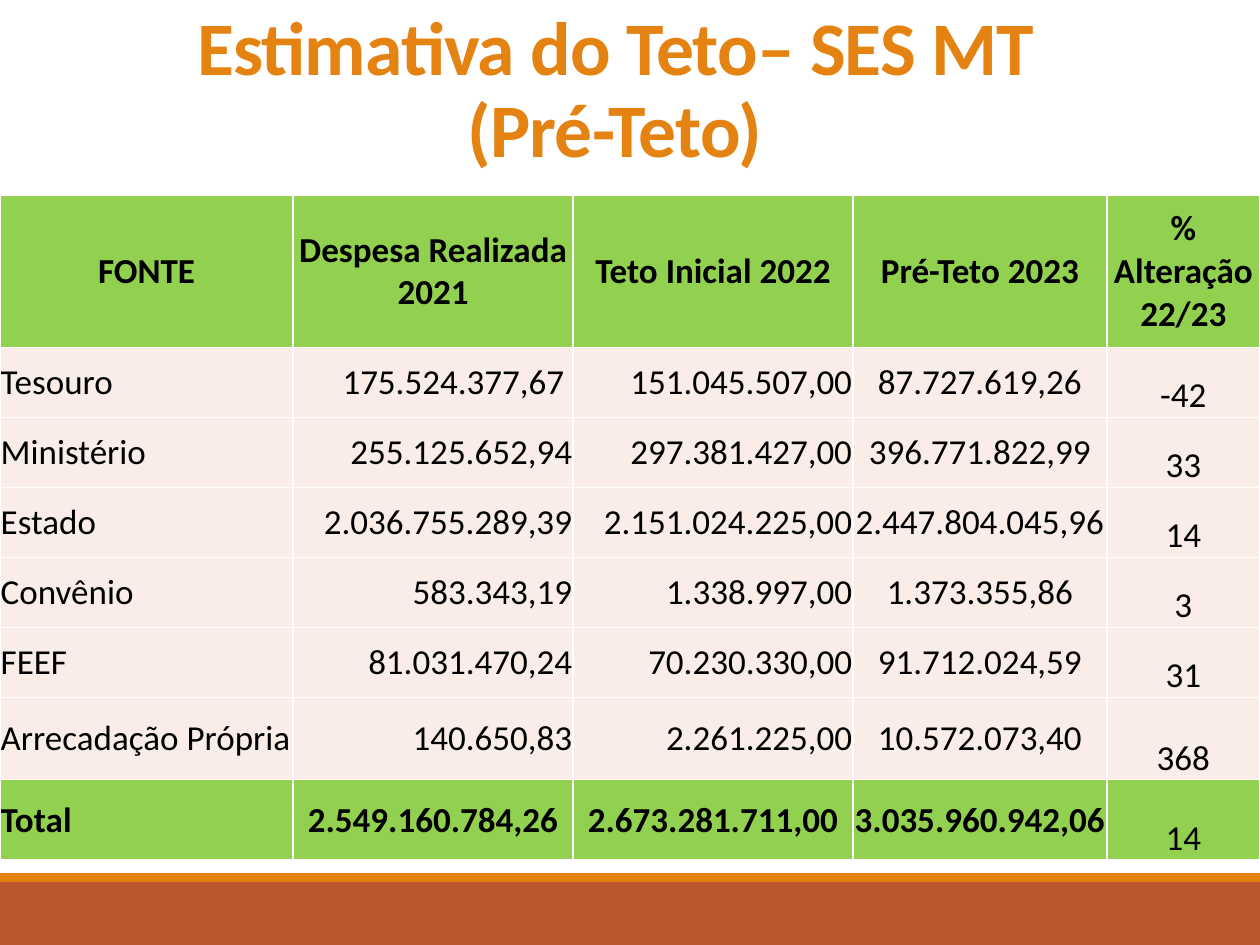
from dataclasses import dataclass

from lxml import etree
from pptx import Presentation
from pptx.dml.color import RGBColor
from pptx.enum import shapes, text
from pptx.oxml import ns
from pptx.util import Pt


@dataclass(frozen=True)
class Theme:
    font: str = "Calibri"
    title_size: float = 43.2
    table_size: float = 20
    orange: str = "E48312"
    rust: str = "BD582C"
    green: str = "92D050"
    blush: str = "FAEDE7"
    ink: str = "000000"
    border: str = "FFFFFF"


THEME = Theme()
LEFT, CENTER, RIGHT = (text.PP_ALIGN.LEFT, text.PP_ALIGN.CENTER,
                       text.PP_ALIGN.RIGHT)
MIDDLE, BOTTOM = text.MSO_ANCHOR.MIDDLE, text.MSO_ANCHOR.BOTTOM

COLUMN_WIDTHS = [167.5, 160, 160, 145, 87.5]
ROW_HEIGHTS = [87] + [40] * 5 + [47, 46]
BODY_ALIGNMENT = [LEFT, RIGHT, RIGHT, CENTER, CENTER]
TOTAL_ALIGNMENT = [LEFT] + [CENTER] * 4
BUDGET = [
    ["FONTE", "Despesa Realizada 2021", "Teto Inicial 2022", "Pré-Teto 2023",
     "% Alteração 22/23"],
    ["Tesouro", "175.524.377,67 ", "151.045.507,00", "87.727.619,26", "-42"],
    ["Ministério", "255.125.652,94", "297.381.427,00", "396.771.822,99", "33"],
    ["Estado", "2.036.755.289,39", "2.151.024.225,00", "2.447.804.045,96", "14"],
    ["Convênio", "583.343,19", "1.338.997,00", "1.373.355,86", "3"],
    ["FEEF", "81.031.470,24", "70.230.330,00", "91.712.024,59", "31"],
    ["Arrecadação Própria", "140.650,83", "2.261.225,00", "10.572.073,40", "368"],
    ["Total", "2.549.160.784,26", "2.673.281.711,00", "3.035.960.942,06", "14"],
]


def set_all(target, values):
    for name, value in values.items():
        setattr(target, name, value)


def place(shape, box):
    set_all(shape, dict(zip(("left", "top", "width", "height"), map(Pt, box))))


def write(frame, words, size, color, bold, align):
    paragraph = frame.paragraphs[0]
    paragraph.alignment = align
    run = paragraph.add_run()
    run.text = words
    set_all(run.font, {"name": THEME.font, "size": Pt(size), "bold": bold})
    run.font.color.rgb = RGBColor.from_string(color)
    return paragraph, run


def add_title(slide, box):
    title = slide.shapes.title
    place(title, box)
    set_all(title.text_frame, {"word_wrap": True, "vertical_anchor": BOTTOM,
                               "auto_size": text.MSO_AUTO_SIZE.NONE})
    paragraph, run = write(title.text_frame, "Estimativa do Teto– SES MT (Pré-Teto)",
                           THEME.title_size, THEME.orange, True, CENTER)
    set_all(paragraph, {"line_spacing": 0.9, "space_before": Pt(0)})
    run.font._element.set("spc", "-50")


def add_footer(slide, box):
    """Stack a thin orange band on a rust band."""
    left, top, width, height = box
    edge = 5
    bands = [(top, edge, THEME.orange), (top + edge, height - edge, THEME.rust)]
    for band_top, band_height, color in bands:
        band = slide.shapes.add_shape(
            shapes.MSO_SHAPE.RECTANGLE,
            *map(Pt, (left, band_top, width, band_height)))
        band.shadow.inherit = False
        band.fill.solid()
        band.fill.fore_color.rgb = RGBColor.from_string(color)
        band.line.fill.background()


def add_borders(cell):
    properties = cell._tc.get_or_add_tcPr()
    for position, side in enumerate(("lnL", "lnR", "lnT", "lnB")):
        line = etree.Element(ns.qn(f"a:{side}"), w=str(Pt(1)))
        fill = etree.SubElement(line, ns.qn("a:solidFill"))
        etree.SubElement(fill, ns.qn("a:srgbClr"), val=THEME.border)
        properties.insert(position, line)


def fill_cell(cell, words, color, bold, align, is_change):
    inset = Pt(0 if is_change else 0.4)
    set_all(cell, {"margin_left": inset, "margin_right": inset,
                   "margin_top": inset, "margin_bottom": 0,
                   "vertical_anchor": BOTTOM if is_change else MIDDLE})
    cell.fill.solid()
    cell.fill.fore_color.rgb = RGBColor.from_string(color)
    write(cell.text_frame, words, THEME.table_size, THEME.ink, bold, align)
    add_borders(cell)


def add_budget(slide, box):
    """Draw the table, sharing the box out by column and row weights."""
    left, top, width, height = box
    table = slide.shapes.add_table(len(BUDGET), len(COLUMN_WIDTHS),
                                   *map(Pt, box)).table
    for column, weight in zip(table.columns, COLUMN_WIDTHS):
        column.width = Pt(width * weight / sum(COLUMN_WIDTHS))
    for row, weight in zip(table.rows, ROW_HEIGHTS):
        row.height = Pt(height * weight / sum(ROW_HEIGHTS))

    total = len(BUDGET) - 1
    alignments = {0: [CENTER] * 5, total: TOTAL_ALIGNMENT}
    for r, record in enumerate(BUDGET):
        strong = r in (0, total)
        for c, words in enumerate(record):
            is_change = r > 0 and c == len(record) - 1
            fill_cell(table.cell(r, c), words,
                      THEME.green if strong else THEME.blush,
                      strong and not is_change,
                      alignments.get(r, BODY_ALIGNMENT)[c], is_change)


def main():
    deck = Presentation()
    set_all(deck, {"slide_width": Pt(720), "slide_height": Pt(540)})
    slide = deck.slides.add_slide(deck.slide_layouts.get_by_name("Title Only"))
    add_footer(slide, (0, 499, 720, 41))
    add_title(slide, (76.5, 0, 550, 103))
    add_budget(slide, (0, 111.5, 720, 380))
    deck.save("out.pptx")


if __name__ == "__main__":
    main()
